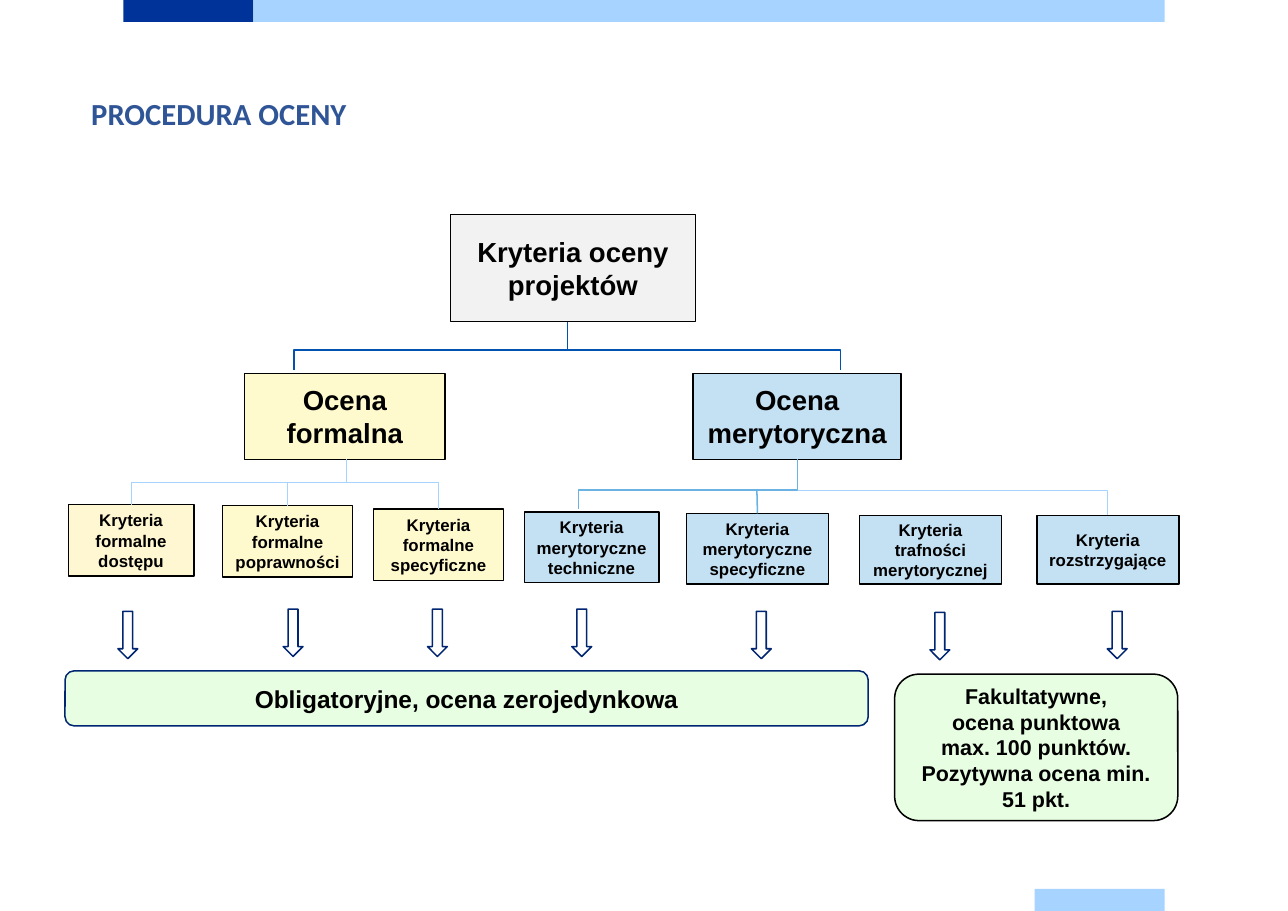
from collections import namedtuple

from lxml import etree
from pptx import Presentation
from pptx.dml.color import RGBColor
from pptx.enum.shapes import MSO_CONNECTOR, MSO_SHAPE
from pptx.enum.text import MSO_ANCHOR, PP_ALIGN
from pptx.oxml.ns import qn
from pptx.util import Inches, Pt

RECT = MSO_SHAPE.RECTANGLE
ROUNDED = MSO_SHAPE.ROUNDED_RECTANGLE
DOWN_ARROW = MSO_SHAPE.DOWN_ARROW
STRAIGHT = MSO_CONNECTOR.STRAIGHT
MIDDLE = MSO_ANCHOR.MIDDLE
CENTER = PP_ALIGN.CENTER
TOP_SIDE = 0

Box = namedtuple("Box", "left top width height")


class Theme:
    body_font, title_font = "Arial", "Calibri"
    title_size, head_size, result_size, score_size, small_size = 20, 18, 16, 14, 11
    navy, sky, title = "003399", "A6D3FF", "2F5597"
    black, white, grey = "000000", "FFFFFF", "F2F2F2"
    yellow, cream, blue, green = "FFFACE", "FFF7D1", "C4E0F3", "E7FEE2"
    trunk, branch, outline = "0051B0", "6BB1E2", "002671"
    thin, normal = 0.5, 1


def color(code):
    return RGBColor.from_string(code)


def inside(region, left, top, width, height):
    return Box(region.left + left, region.top + top, width, height)


def write(shape, lines, size, ink=Theme.black, font=Theme.body_font, align=CENTER):
    frame = shape.text_frame
    frame.word_wrap = True
    frame.vertical_anchor = MIDDLE
    for index, line in enumerate(lines):
        para = frame.add_paragraph() if index else frame.paragraphs[0]
        para.text = line
        para.alignment = align
        para.font.name = font
        para.font.size = Pt(size)
        para.font.bold = True
        para.font.color.rgb = color(ink)


def add_block(page, kind, box, fill, line=None, weight=Theme.normal):
    shape = page.shapes.add_shape(kind, *map(Inches, box))
    shape.shadow.inherit = False
    shape.fill.solid()
    shape.fill.fore_color.rgb = color(fill)
    if line:
        shape.line.color.rgb = color(line)
        shape.line.width = Pt(weight)
    else:
        shape.line.fill.background()
    return shape


def add_elbow(page, start, bus, end, line, weight=Theme.normal):
    """Run down from start to the bus height, across, then down to end."""
    points = [(start[0], bus), (end[0], bus), end]
    builder = page.shapes.build_freeform(Inches(start[0]), Inches(start[1]))
    builder.add_line_segments([(Inches(x), Inches(y)) for x, y in points], close=False)
    elbow = builder.convert_to_shape()
    elbow.shadow.inherit = False
    elbow.fill.background()
    elbow.line.color.rgb = color(line)
    elbow.line.width = Pt(weight)


def add_drop(page, x, y, target, line, weight):
    """Straight line from a bus down to the top of a target box."""
    drop = page.shapes.add_connector(STRAIGHT, Inches(x), Inches(y), Inches(x), target.top)
    drop.end_connect(target, TOP_SIDE)
    drop.line.color.rgb = color(line)
    drop.line.width = Pt(weight)
    etree.SubElement(drop.element.spPr, qn("a:effectLst"))


def draw_bands(page, box):
    # Top and bottom colour bands
    bar, tab = 0.2, 1.18
    add_block(page, RECT, inside(box, 0, 0, tab, bar), Theme.navy)
    add_block(page, RECT, inside(box, tab, 0, box.width - tab, bar), Theme.sky)
    add_block(page, RECT, inside(box, box.width - tab, box.height - bar, tab, bar), Theme.sky)


def draw_title(page, box):
    title = page.shapes.add_textbox(*map(Inches, box))
    write(title, ["PROCEDURA OCENY"], Theme.title_size, Theme.title, Theme.title_font, PP_ALIGN.LEFT)


def draw_main_tree(page, box):
    # Trunk from the root to both assessments
    root_foot = (box.left + 2.93, box.top + 0.97)
    for offset in (0.45, 5.41):
        end = (box.left + offset, box.top + 1.41)
        add_elbow(page, root_foot, box.top + 1.23, end, Theme.trunk)

    # Root and the two assessments
    blocks = [
        ("Kryteria oceny projektów", (1.87, 0, 2.22, 0.97), Theme.grey, Theme.thin),
        ("Ocena formalna", (0, 1.44, 1.82, 0.78), Theme.yellow, Theme.normal),
        ("Ocena merytoryczna", (4.07, 1.44, 1.89, 0.78), Theme.blue, Theme.normal),
    ]
    for text, place, fill, weight in blocks:
        block = add_block(page, RECT, inside(box, *place), fill, Theme.black, weight)
        write(block, [text], Theme.head_size)


def draw_criteria(page, box):
    # Criterion boxes: text, place, fill, then offset of the arrow below
    criteria = [
        (["Kryteria formalne dostępu"], (0.03, 0, 1.14, 0.65), Theme.cream, (0.48, 0.97)),
        (["Kryteria formalne poprawności"], (1.43, 0.01, 1.18, 0.65), Theme.yellow, (1.98, 0.95)),
        (["Kryteria formalne specyficzne"], (2.8, 0.04, 1.18, 0.65), Theme.yellow, (3.29, 0.95)),
        (["Kryteria", "merytoryczne techniczne"], (4.17, 0.07, 1.22, 0.64), Theme.blue, (4.6, 0.95)),
        (["Kryteria merytoryczne specyficzne"], (5.64, 0.08, 1.29, 0.64), Theme.blue, (6.23, 0.97)),
        (["Kryteria trafności merytorycznej"], (7.21, 0.1, 1.29, 0.62), Theme.blue, (7.85, 0.98)),
        (["Kryteria rozstrzygające"], (8.82, 0.1, 1.29, 0.62), Theme.blue, (9.46, 0.97)),
    ]
    blocks = []
    for lines, place, fill, arrow in criteria:
        block = add_block(page, RECT, inside(box, *place), fill, Theme.black)
        write(block, lines, Theme.small_size)
        blocks.append(block)
        add_block(page, DOWN_ARROW, inside(box, *arrow, 0.18, 0.43), Theme.white, Theme.outline)

    # Branches from each assessment to its criteria
    formal_x, merit_x = box.left + 2.55, box.left + 6.65
    foot, formal_bus, merit_bus = box.top - 0.41, box.top - 0.2, box.top - 0.13
    branches = [
        ((formal_x, foot), formal_bus, (0.6, 0), Theme.sky, Theme.thin),
        ((formal_x, foot), formal_bus, (3.39, 0.04), Theme.sky, Theme.thin),
        ((merit_x, foot), merit_bus, (4.66, 0.04), Theme.branch, Theme.normal),
        ((merit_x, merit_bus), merit_bus, (9.46, 0.1), Theme.sky, Theme.thin),
    ]
    for start, bus, (x, y), line, weight in branches:
        add_elbow(page, start, bus, (box.left + x, box.top + y), line, weight)
    add_drop(page, box.left + 2.02, formal_bus, blocks[1], Theme.sky, Theme.thin)
    add_drop(page, box.left + 6.28, merit_bus, blocks[4], Theme.branch, Theme.normal)


def draw_results(page, box):
    # Mandatory and optional outcomes
    mandatory = add_block(page, ROUNDED, inside(box, 0, 0, 7.29, 0.5), Theme.green, Theme.outline)
    write(mandatory, ["Obligatoryjne, ocena zerojedynkowa"], Theme.result_size)
    optional = add_block(page, ROUNDED, inside(box, 7.53, 0.03, 2.57, 1.33), Theme.green, Theme.black)
    write(optional, ["Fakultatywne,", "ocena punktowa", "max. 100 punktów.",
                     "Pozytywna ocena min. 51 pkt."], Theme.score_size)


def main():
    deck = Presentation()
    deck.slide_width, deck.slide_height = Inches(11.69), Inches(8.27)
    page = deck.slides.add_slide(deck.slide_layouts[6])
    draw_bands(page, Box(1.12, 0, 9.45, 8.27))
    draw_title(page, Box(0.73, 0.81, 10.23, 0.44))
    draw_main_tree(page, Box(2.22, 1.95, 5.96, 2.22))
    draw_criteria(page, Box(0.59, 4.58, 10.11, 1.41))
    draw_results(page, Box(0.59, 6.09, 10.1, 1.36))
    deck.save("out.pptx")


if __name__ == "__main__":
    main()
